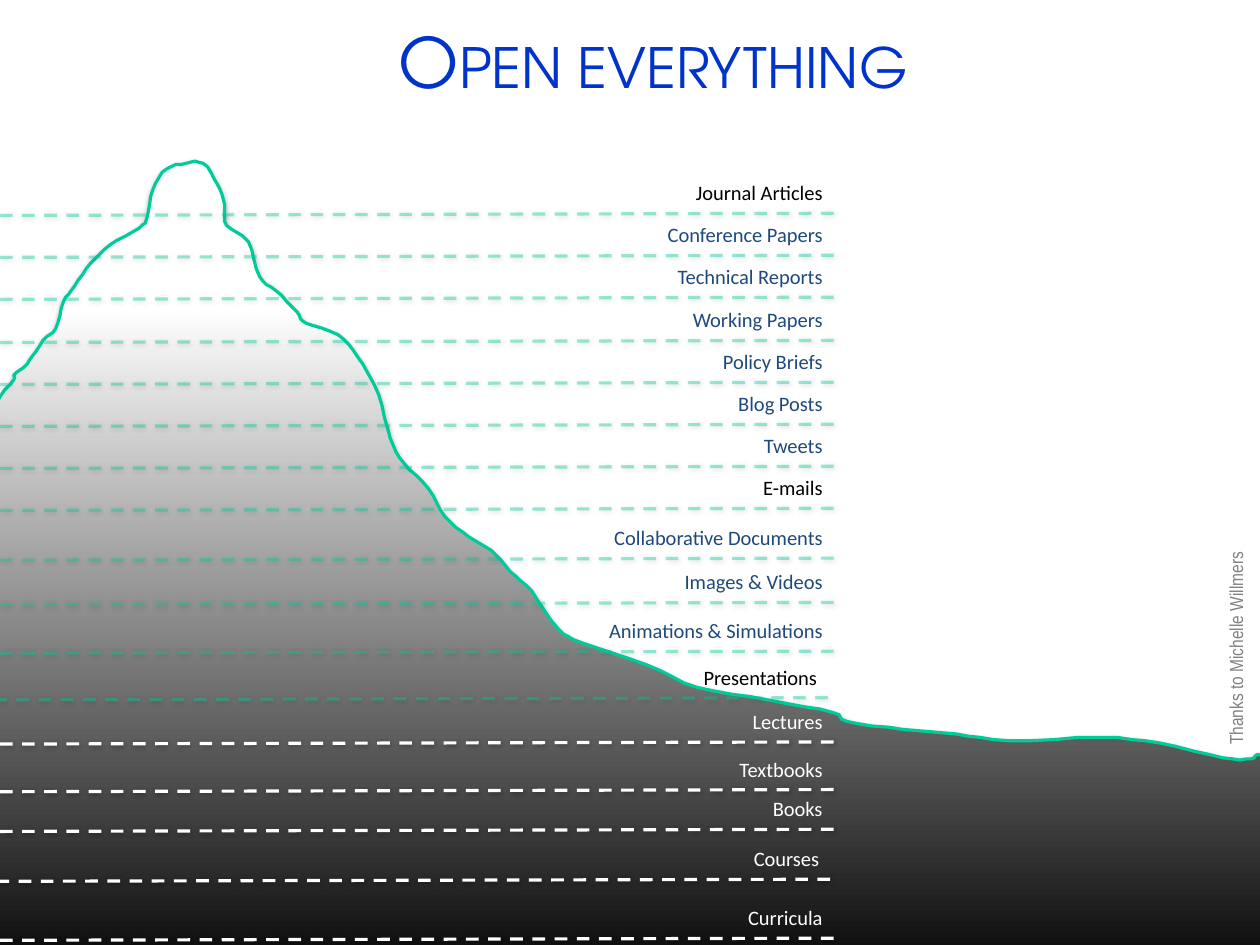
import dataclasses

import lxml.etree
import pptx
import pptx.dml.color
import pptx.enum.dml
import pptx.enum.shapes
import pptx.enum.text
import pptx.oxml.ns
import pptx.util

PX = 9144  # EMU in one px, 100 px to the inch
SLIDE_WIDTH, SLIDE_HEIGHT = 1111, 833
LINE_RIGHT, LINE_LENGTH, LINE_DROP = 735, 777, 2
LABEL_WIDTH, LABEL_HEIGHT, LABEL_RISE = 221, 32, 34
FIRST_LINE, LINE_STEP = 188, 37.2


@dataclasses.dataclass(frozen=True)
class Theme:
    green: str = "00CC99"
    navy: str = "1F497D"
    black: str = "000000"
    white: str = "FFFFFF"
    blue: str = "0033CC"
    grey: str = "808080"
    title_font: str = "TeX Gyre Adventor"
    label_font: str = "Calibri"
    credit_font: str = "Arial Narrow"
    title_size: int = 44
    label_size: int = 13
    credit_size: int = 12
    line_width: int = 2


THEME = Theme()

EVEN_LEVELS = ["Journal Articles", "Conference Papers", "Technical Reports",
               "Working Papers", "Policy Briefs", "Blog Posts", "Tweets", "E-mails"]
LOWER_LEVELS = {"Collaborative Documents": 492, "Images & Videos": 531,
                "Animations & Simulations": 574, "Presentations": 615,
                "Lectures": 654, "Textbooks": 696, "Books": 731,
                "Courses": 775, "Curricula": 827}
BLACK_LEVELS = {"Journal Articles", "E-mails", "Presentations"}
WHITE_LEVELS = {"Lectures", "Textbooks", "Books", "Courses", "Curricula"}
SHIFTED_LEFT = {"Presentations": 5, "Courses": 3}

RIDGE = [
    (-9, 388), (-4, 357), (12, 335), (13, 330), (24, 321), (38, 300), (49, 290),
    (56, 266), (66, 252), (80, 232), (97, 216), (123, 201), (130, 191),
    (135, 167), (147, 149), (164, 144), (179, 144), (192, 163), (198, 180),
    (200, 199), (219, 213), (229, 244), (243, 256), (262, 275), (270, 285),
    (298, 295), (315, 314), (334, 348), (344, 386), (356, 408), (378, 431),
    (392, 455), (413, 473), (433, 485), (450, 504), (469, 521), (492, 554),
    (514, 567), (570, 586), (615, 606), (677, 617), (734, 628), (747, 636),
    (796, 643), (843, 647), (890, 653), (970, 650), (1023, 655), (1078, 668),
    (1103, 669), (1113, 666), (1147, 690),
]
MOUNTAIN_FOOT = [(1147, 945), (-19, 945), (-19, 388)]


def smooth(points, steps=4):
    """Return points on a Catmull-Rom curve through the given ones."""
    curve = []
    padded = points[:1] + points + points[-1:]
    for before, start, end, after in zip(padded, padded[1:], padded[2:], padded[3:]):
        for step in range(steps):
            t = step / steps
            curve.append(tuple(
                b + t * (c - a + t * (2 * a - 5 * b + 4 * c - d
                                      + t * (3 * b - a - 3 * c + d))) / 2
                for a, b, c, d in zip(before, start, end, after)))
    return curve + points[-1:]


def rgb(colour):
    return pptx.dml.color.RGBColor.from_string(colour)


def add_xml(parent, tag, **attributes):
    values = {key: str(value) for key, value in attributes.items()}
    return lxml.etree.SubElement(parent, pptx.oxml.ns.qn(tag), values)


def add_shadow(shape, opacity, distance):
    effects = add_xml(shape._element.spPr, "a:effectLst")
    shadow = add_xml(effects, "a:outerShdw", blurRad=pptx.util.Pt(3.1),
                     dist=pptx.util.Pt(distance), dir=90 * 60000, rotWithShape=0)
    black = add_xml(shadow, "a:srgbClr", val=THEME.black)
    add_xml(black, "a:alpha", val=opacity * 1000)


def add_text(slide, text, box, font_name, size, colour, align, inset=(10, 5)):
    textbox = slide.shapes.add_textbox(*(length * PX for length in box))
    frame = textbox.text_frame
    frame.word_wrap = True
    frame.margin_left = frame.margin_right = inset[0] * PX
    frame.margin_top = frame.margin_bottom = inset[1] * PX
    paragraph = frame.paragraphs[0]
    paragraph.alignment = align
    run = paragraph.add_run()
    run.text = text
    run.font.name = font_name
    run.font.size = pptx.util.Pt(size)
    run.font.color.rgb = rgb(colour)
    return textbox


def add_mountain(slide):
    outline = smooth(RIDGE) + MOUNTAIN_FOOT
    builder = slide.shapes.build_freeform(*outline[0], scale=PX)
    builder.add_line_segments(outline[1:], close=True)
    mountain = builder.convert_to_shape()
    mountain.fill.gradient()
    mountain.fill.gradient_angle = 90
    stops = [(0.09, THEME.black), (0.84, THEME.white)]
    for stop, (position, colour) in zip(mountain.fill.gradient_stops, stops):
        stop.position = position
        stop.color.rgb = rgb(colour)
    mountain.line.color.rgb = rgb(THEME.green)
    mountain.line.width = pptx.util.Pt(THEME.line_width)
    add_xml(mountain.line._get_or_add_ln(), "a:round")
    add_shadow(mountain, opacity=38, distance=1.6)


def add_level_line(slide, right, y, colour, opacity):
    level_line = slide.shapes.add_connector(
        pptx.enum.shapes.MSO_CONNECTOR.STRAIGHT,
        right * PX, y * PX, (right - LINE_LENGTH) * PX, (y + LINE_DROP) * PX)
    level_line.line.color.rgb = rgb(colour)
    level_line.line.width = pptx.util.Pt(THEME.line_width)
    level_line.line.dash_style = pptx.enum.dml.MSO_LINE.DASH
    line_colour = level_line._element.spPr.find(".//" + pptx.oxml.ns.qn("a:srgbClr"))
    add_xml(line_colour, "a:alpha", val=opacity * 1000)
    add_shadow(level_line, opacity=30, distance=0.6)


def add_level(slide, label, y):
    """Add a dashed line, white below the surface, with its label above it."""
    right = LINE_RIGHT - SHIFTED_LEFT.get(label, 0)
    label_colour = THEME.black if label in BLACK_LEVELS else THEME.navy
    line_colour, opacity = THEME.green, 40
    if label in WHITE_LEVELS:
        label_colour = line_colour = THEME.white
        opacity = 100
    add_level_line(slide, right, y, line_colour, opacity)
    add_text(slide, label,
             (right - LABEL_WIDTH, y - LABEL_RISE, LABEL_WIDTH, LABEL_HEIGHT),
             THEME.label_font, THEME.label_size, label_colour,
             pptx.enum.text.PP_ALIGN.RIGHT)


def add_credit(slide):
    credit = add_text(slide, "Thanks to Michelle Willmers", (894, 457, 390, 31),
                      THEME.credit_font, THEME.credit_size, THEME.grey,
                      pptx.enum.text.PP_ALIGN.LEFT, inset=(11, 6))
    credit.rotation = 270


def add_title(slide):
    title = add_text(slide, "Open everything", (104, -16, 944, 139),
                     THEME.title_font, THEME.title_size, THEME.blue,
                     pptx.enum.text.PP_ALIGN.CENTER)
    title.text_frame.vertical_anchor = pptx.enum.text.MSO_ANCHOR.MIDDLE
    title_run = title.text_frame.paragraphs[0].runs[0]
    title_run._r.get_or_add_rPr().set("cap", "small")


def main():
    presentation = pptx.Presentation()
    presentation.slide_width = SLIDE_WIDTH * PX
    presentation.slide_height = SLIDE_HEIGHT * PX
    slide = presentation.slides.add_slide(presentation.slide_layouts[6])
    add_mountain(slide)
    for index, label in enumerate(EVEN_LEVELS):
        add_level(slide, label, round(FIRST_LINE + index * LINE_STEP))
    for label, y in LOWER_LEVELS.items():
        add_level(slide, label, y)
    add_credit(slide)
    add_title(slide)
    presentation.save("out.pptx")


if __name__ == "__main__":
    main()
